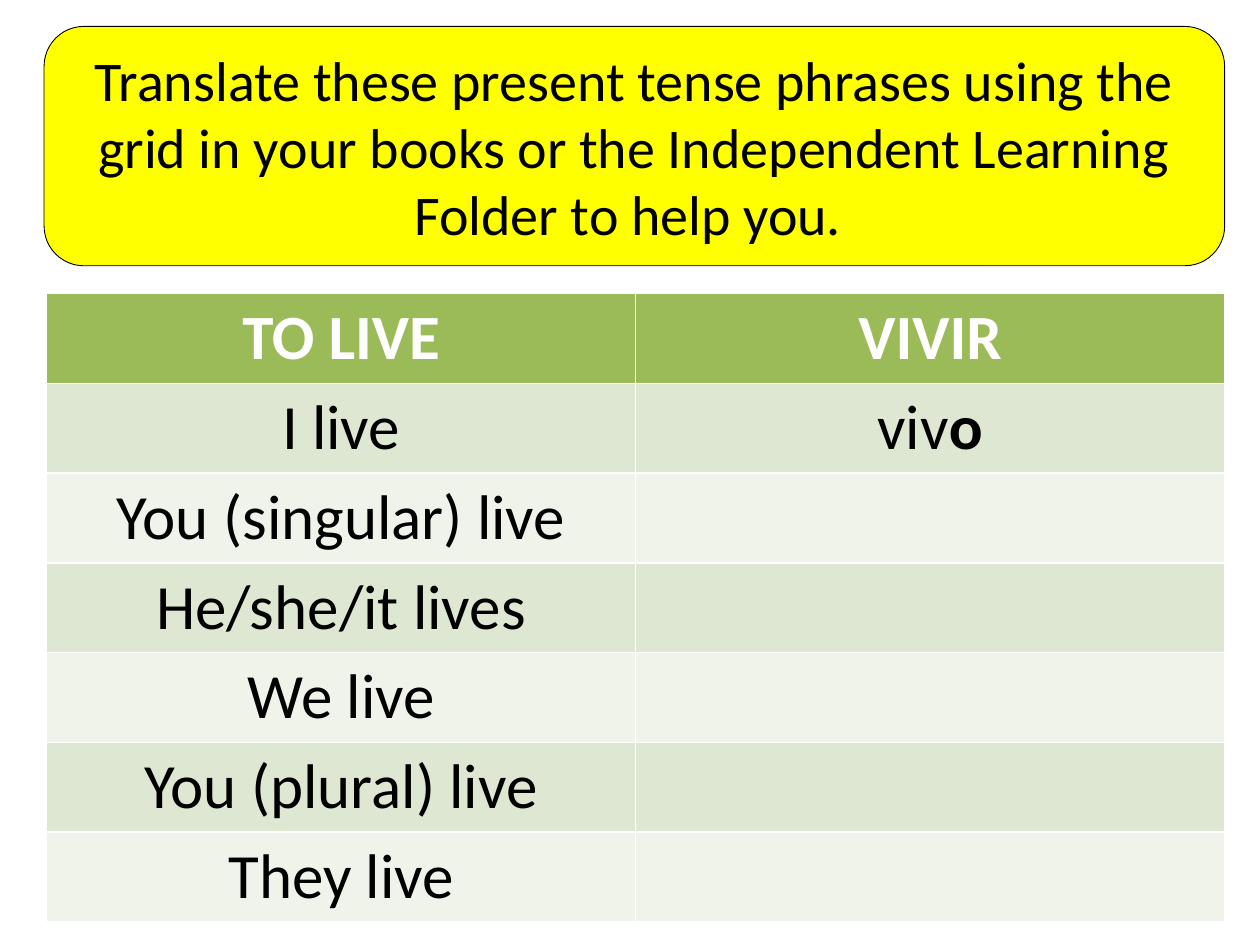
from pptx import Presentation
from pptx.dml.color import RGBColor
from pptx.enum.shapes import MSO_SHAPE
from pptx.enum.text import MSO_ANCHOR, PP_ALIGN
from pptx.util import Inches, Pt

FONT = "Calibri"
BLACK, WHITE, YELLOW = "000000", "FFFFFF", "FFFF00"
HEADER_GREEN, BANDS = "9BBB59", ("DEE7D1", "EFF3EA")


def color(hex_string):
    return RGBColor.from_string(hex_string)


def paint(target, hex_string):
    target.fill.solid()
    target.fill.fore_color.rgb = color(hex_string)


class SlideBuilder:
    def __init__(self, slide):
        self.slide = slide

    def centered_text(self, text_frame, runs, size, text_color=BLACK, bold=False):
        """Set (text, bold) runs as one centred paragraph."""
        paragraph = text_frame.paragraphs[0]
        paragraph.alignment = PP_ALIGN.CENTER
        font = paragraph.font
        font.name, font.size, font.bold = FONT, Pt(size), bold
        font.color.rgb = color(text_color)
        for text, emphasized in runs:
            run = paragraph.add_run()
            run.text = text
            if emphasized:
                run.font.bold = True

    def banner(self, left, top, width, height, text):
        shape = self.slide.shapes.add_shape(
            MSO_SHAPE.ROUNDED_RECTANGLE,
            Inches(left), Inches(top), Inches(width), Inches(height))
        shape.shadow.inherit = False
        paint(shape, YELLOW)
        shape.line.color.rgb = color(BLACK)
        shape.line.width = Pt(0.5)
        shape.text_frame.word_wrap = True
        shape.text_frame.vertical_anchor = MSO_ANCHOR.MIDDLE
        self.centered_text(shape.text_frame, [(text, False)], 32)

    def table(self, left, top, width, height, rows):
        # The default table style supplies the white rules
        table = self.slide.shapes.add_table(
            len(rows), len(rows[0]),
            Inches(left), Inches(top), Inches(width), Inches(height)).table
        for row_index, row in enumerate(rows):
            is_header = row_index == 0
            fill = HEADER_GREEN if is_header else BANDS[(row_index - 1) % 2]
            for column_index, runs in enumerate(row):
                cell = table.cell(row_index, column_index)
                paint(cell, fill)
                self.centered_text(cell.text_frame, runs, 36,
                                   WHITE if is_header else BLACK, is_header)


def main():
    presentation = Presentation()
    presentation.slide_width = Inches(10)
    presentation.slide_height = Inches(7.5)
    builder = SlideBuilder(
        presentation.slides.add_slide(presentation.slide_layouts[6]))

    # Instruction
    builder.banner(0.35, 0.21, 9.37, 1.9,
                   "Translate these present tense phrases using the grid in "
                   "your books or the Independent Learning Folder to help you. ")

    # Conjugation grid: only the first form is given
    phrases = ["You (singular) live", "He/she/it lives", "We live",
               "You (plural) live", "They live"]
    rows = [
        [[("TO LIVE", False)], [("VIVIR", False)]],
        [[("I live", False)], [("viv", False), ("o", True)]],
    ] + [[[(phrase, False)], []] for phrase in phrases]
    builder.table(0.37, 2.33, 9.35, 4.9, rows)

    presentation.save("out.pptx")


if __name__ == "__main__":
    main()
